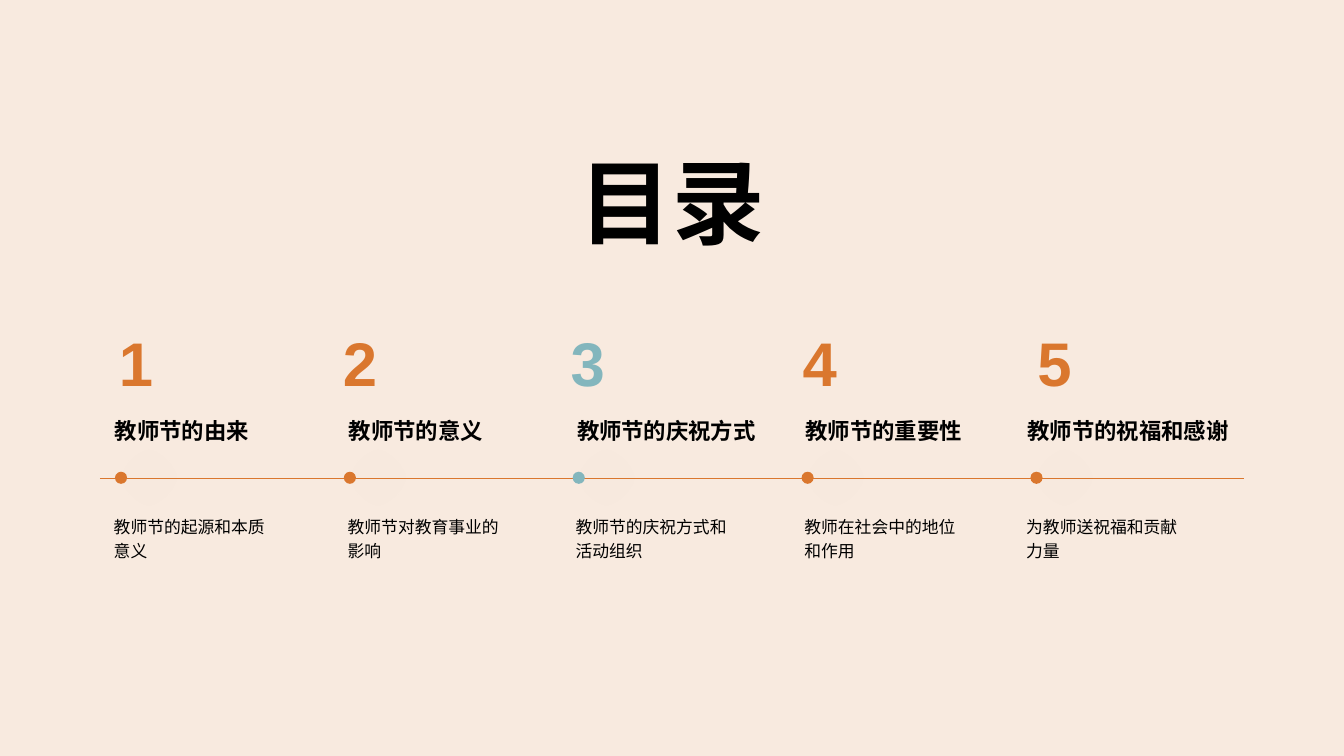
from lxml import etree
from pptx import Presentation
from pptx.dml.color import RGBColor
from pptx.enum.shapes import MSO_CONNECTOR as Link, MSO_SHAPE as Kind
from pptx.enum.text import MSO_AUTO_SIZE as Fit, PP_ALIGN as Align
from pptx.oxml.ns import qn
from pptx.util import Inches, Pt

# Content: number left, text left, heading width, heading, note, colour, shadow
TITLE = "目录"
ITEMS = [
    (1.03, 1.03, 1.55, "教师节的由来", "教师节的起源和本质意义", "main", "83B6BD"),
    (3.25, 3.35, 1.55, "教师节的意义", "教师节对教育事业的影响", "main", "E7A020"),
    (5.51, 5.61, 2.0, "教师节的庆祝方式", "教师节的庆祝方式和活动组织", "mark", "689F4F"),
    (7.81, 7.88, 1.77, "教师节的重要性", "教师在社会中的地位和作用", "main", "9B5D31"),
    (10.14, 10.08, 2.22, "教师节的祝福和感谢", "为教师送祝福和贡献力量", "main", "8E5B3D"),
]
THEME = {
    "font": "Arial", "back": "F8EADF", "ink": "000000",
    "main": "DA772E", "mark": "83B6BD",
    "title": 66, "number": 44, "head": 16, "note": 12,
}

# Layout
LINE_Y, LINE_X1, LINE_X2 = 4.75, 0.99, 12.34
DOT_X, DOT_Y, DOT, STEP = 1.14, 4.68, 0.12, 2.27

deck = Presentation()
deck.slide_width, deck.slide_height = Inches(13.33), Inches(7.5)
slide = deck.slides.add_slide(deck.slide_layouts[6])


def color(name):
    return RGBColor.from_string(THEME[name])


def add_text(text, x, y, w, h, size, tint="ink", bold=True, wrap=True,
             align=Align.CENTER, space=None):
    box = slide.shapes.add_textbox(Inches(x), Inches(y), Inches(w), Inches(h))
    frame = box.text_frame
    frame.word_wrap = wrap
    frame.auto_size = Fit.SHAPE_TO_FIT_TEXT
    para = frame.paragraphs[0]
    para.alignment = align
    para.line_spacing = space
    run = para.add_run()
    run.text = text
    font = run.font
    font.name, font.size, font.bold = THEME["font"], Pt(THEME[size]), bold
    font.color.rgb = color(tint)


def add_glow(shape, tint):
    """Give a shape a soft shadow to its right."""
    props = shape._element.spPr
    for old in props.findall(qn("a:effectLst")):
        props.remove(old)
    effects = etree.SubElement(props, qn("a:effectLst"))
    shadow = etree.SubElement(
        effects, qn("a:outerShdw"), blurRad=str(Pt(32)), dist=str(Pt(20)),
        dir="0", algn="ctr", rotWithShape="0")
    tone = etree.SubElement(shadow, qn("a:srgbClr"), val=tint)
    etree.SubElement(tone, qn("a:alpha"), val="10000")


def add_dot(x, tint, glow):
    dot = slide.shapes.add_shape(
        Kind.OVAL, Inches(x), Inches(DOT_Y), Inches(DOT), Inches(DOT))
    dot.fill.solid()
    dot.fill.fore_color.rgb = color(tint)
    dot.line.fill.background()
    add_glow(dot, glow)


# Background and title
slide.background.fill.solid()
slide.background.fill.fore_color.rgb = color("back")
add_text(TITLE, 5.64, 1.39, 2.05, 1.21, "title", wrap=False)

# Timeline
axis = slide.shapes.add_connector(
    Link.STRAIGHT, Inches(LINE_X1), Inches(LINE_Y), Inches(LINE_X2), Inches(LINE_Y))
axis.line.color.rgb = color("main")
axis.line.width = Pt(0.5)
etree.SubElement(axis._element.spPr, qn("a:effectLst"))

# Chapters
for i, (num_x, x, width, head, note, tint, glow) in enumerate(ITEMS):
    add_text(str(i + 1), num_x, 3.17, 0.64, 0.84, "number", tint=tint)
    add_text(head, x, 4.09, width, 0.37, "head", wrap=False)
    add_text(note, x, 5.04, 1.83, 0.56, "note", bold=False,
             align=Align.LEFT, space=1.2)
    add_dot(DOT_X + i * STEP, tint, glow)

deck.save("out.pptx")
